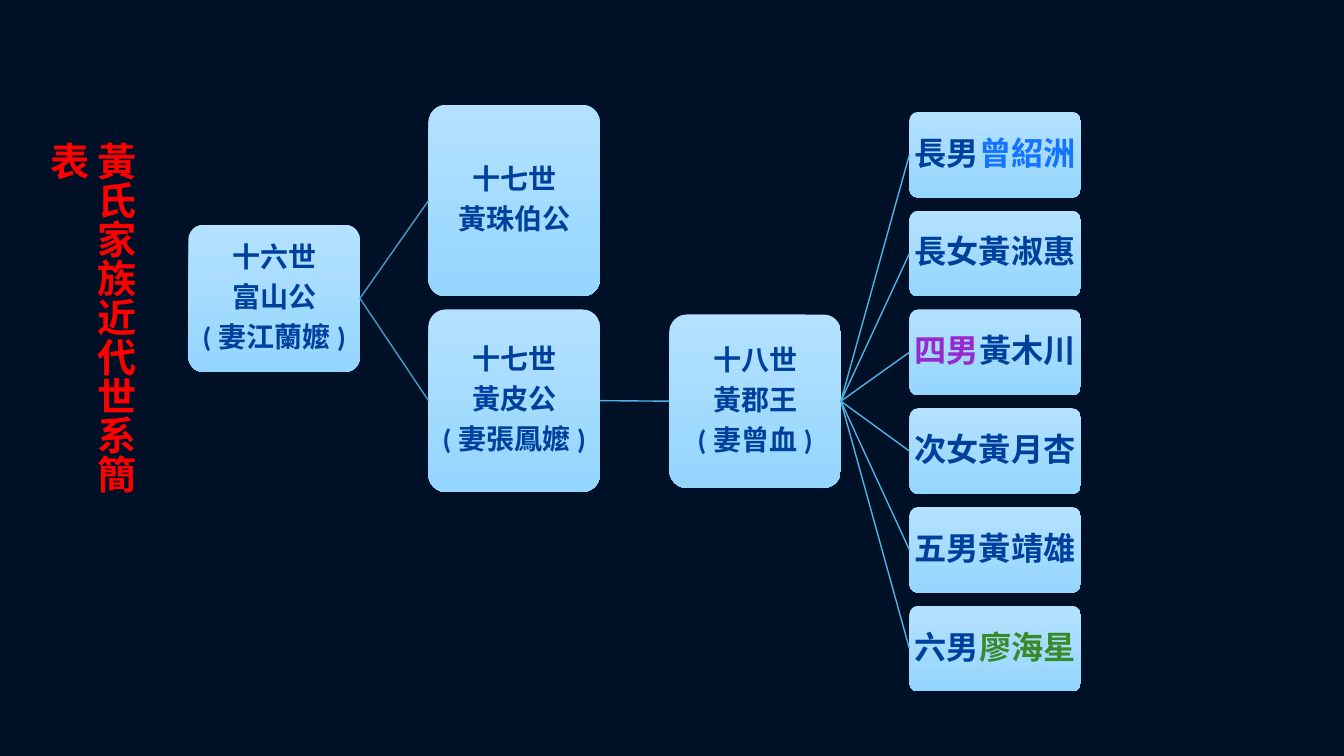
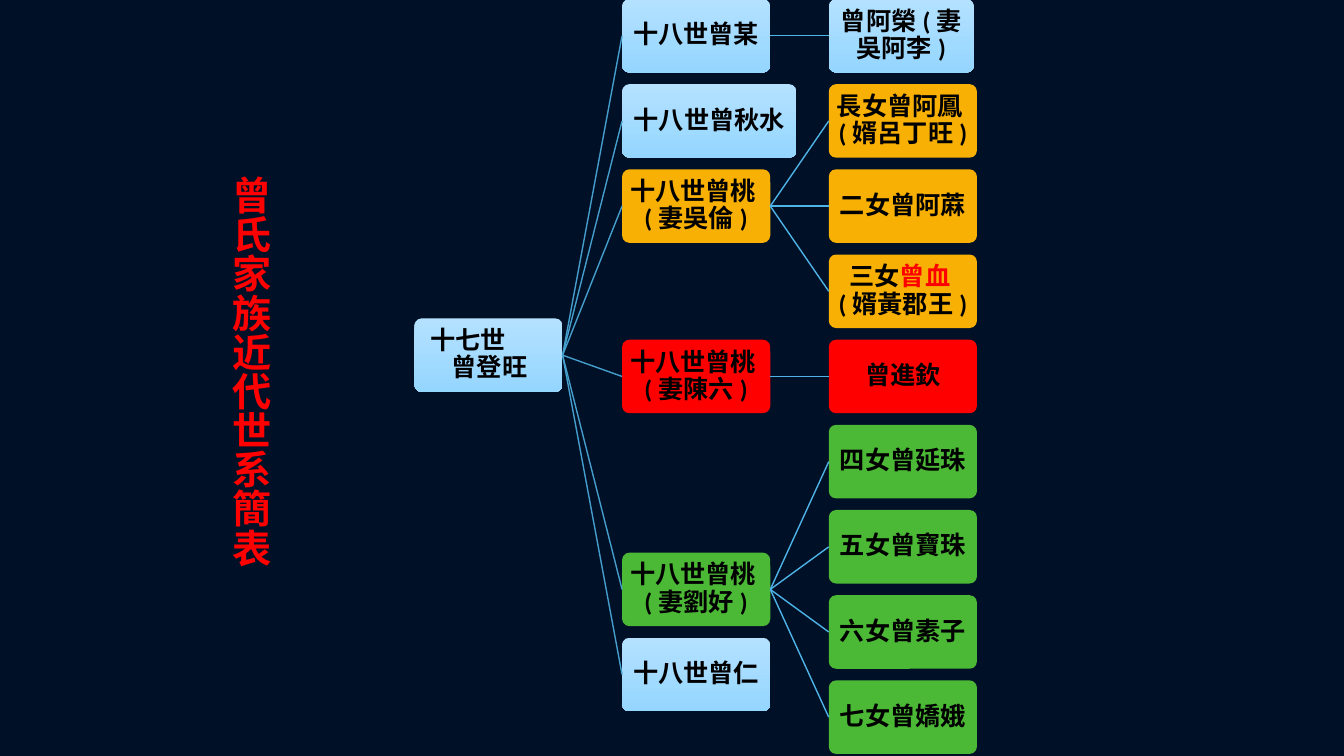
import pptx
import pptx.dml.color
import pptx.enum.shapes
import pptx.enum.text
import pptx.oxml.ns
import pptx.util
from lxml import etree

Inches = pptx.util.Inches
Pt = pptx.util.Pt
ALIGN = pptx.enum.text.PP_ALIGN

COLORS = {
    "night": "001027",
    "sky_top": "B4E1FF",
    "sky_bottom": "95D6FF",
    "navy": "00409D",
    "black": "000000",
    "red": "FF0000",
    "blue": "1474FF",
    "purple": "972ACD",
    "leaf": "388A29",
    "amber": "F8B004",
    "green": "4BB836",
    "first_link": "459ECC",
    "later_link": "4EB3E7",
}


def rgb(name):
    return pptx.dml.color.RGBColor.from_string(COLORS[name])


def write_text(frame, text, *, size, color, align=None, line_spacing=None, gap=0, indents=()):
    lines = [text] if isinstance(text, str) else text
    for index, line in enumerate(lines):
        paragraph = frame.paragraphs[0] if index == 0 else frame.add_paragraph()
        if indents:
            paragraph._p.get_or_add_pPr().set("marL", str(Inches(indents[index])))
        paragraph.alignment = align
        paragraph.line_spacing = line_spacing
        if index:
            paragraph.space_before = Pt(gap)
        pieces = [(line, color)] if isinstance(line, str) else line
        for words, tint in pieces:
            run = paragraph.add_run()
            run.text = words
            run.font.name = "Calibri"
            run.font.size = Pt(size)
            run.font.bold = True
            run.font.color.rgb = rgb(tint)


class FamilyTree:
    def __init__(self):
        self.deck = pptx.Presentation()
        self.deck.slide_width = Inches(13.33)
        self.deck.slide_height = Inches(7.5)
        self.slide = None

    def new_slide(self):
        self.slide = self.deck.slides.add_slide(self.deck.slide_layouts[6])
        fill = self.slide.background.fill
        fill.solid()
        fill.fore_color.rgb = rgb("night")

    def title(self, text, left, top, height):
        box = self.slide.shapes.add_textbox(Inches(left), Inches(top), Inches(0.67), Inches(height))
        frame = box.text_frame
        frame.word_wrap = True
        frame.auto_size = pptx.enum.text.MSO_AUTO_SIZE.SHAPE_TO_FIT_TEXT
        frame._txBody.bodyPr.set("vert", "eaVert")
        write_text(frame, text, size=28, color="red")

    def person(self, text, left, top, width, height, *, fill=None, size=18, color="black",
               inset=0.01, parent=None, link="later_link", align=ALIGN.CENTER, gap=0, indents=()):
        card = self.slide.shapes.add_shape(
            pptx.enum.shapes.MSO_SHAPE.ROUNDED_RECTANGLE,
            Inches(left), Inches(top), Inches(width), Inches(height))
        card.adjustments[0] = 0.1
        card.shadow.inherit = False
        card.line.fill.background()
        if fill:
            card.fill.solid()
            card.fill.fore_color.rgb = rgb(fill)
        else:
            card.fill.gradient()
            card.fill.gradient_angle = 270
            for stop, tint in zip(card.fill.gradient_stops, ("sky_top", "sky_bottom")):
                stop.color.rgb = rgb(tint)
        frame = card.text_frame
        frame.word_wrap = True
        frame.vertical_anchor = pptx.enum.text.MSO_ANCHOR.MIDDLE
        frame.margin_left = frame.margin_right = Inches(inset)
        frame.margin_top = frame.margin_bottom = Inches(inset)
        write_text(frame, text, size=size, color=color, align=align,
                   line_spacing=0.9, gap=gap, indents=indents)
        if parent is not None:
            self.descent(parent, card, link)
        return card

    def descent(self, parent, child, color):
        link = self.slide.shapes.add_connector(pptx.enum.shapes.MSO_CONNECTOR.STRAIGHT, 0, 0, 0, 0)
        link.begin_connect(parent, 3)
        link.end_connect(child, 1)
        link.line.color.rgb = rgb(color)
        link.line.width = Pt(1)
        etree.SubElement(link._element.spPr, pptx.oxml.ns.qn("a:effectLst"))


def build_huang(tree):
    tree.new_slide()
    elder = {"size": 20, "color": "navy", "gap": 7}
    fushan = tree.person(["十六世", "富山公", "(妻江蘭嬤)"], 1.87, 2.23, 1.7, 1.46, **elder)
    tree.person(["十七世", "黃珠伯公"], 4.25, 1.04, 1.7, 1.9,
                parent=fushan, link="first_link", **elder)
    huangpi = tree.person(["十七世", "黃皮公", "(妻張鳳嬤)"], 4.25, 3.07, 1.7, 1.81,
                          parent=fushan, link="first_link", **elder)
    junwang = tree.person(["十八世", "黃郡王", "(妻曾血)"], 6.64, 3.12, 1.7, 1.72,
                          parent=huangpi, **elder)
    children = [
        [("長男", "navy"), ("曾紹洲", "blue")],
        "長女黃淑惠",
        [("四男", "purple"), ("黃木川", "navy")],
        "次女黃月杏",
        "五男黃靖雄",
        [("六男", "navy"), ("廖海星", "leaf")],
    ]
    for row, child in enumerate(children):
        tree.person([child], 9.02, 1.11 + 0.98 * row, 1.7, 0.85,
                    size=23, color="navy", inset=0.02, parent=junwang)
    tree.title("黃氏家族近代世系簡表", 0.76, 1.31, 4.02)


def build_zeng(tree):
    tree.new_slide()
    pitch = 6.76 / 8

    def place(text, left, row, width=1.47, **style):
        return tree.person(text, left, pitch * row - 0.01, width, 0.73, **style)

    dengwang = place(["十七世", "曾登旺"], 4.11, 3.75, align=ALIGN.LEFT, indents=(0.13, 0.34))
    branches = [
        ("十八世曾某", 0, 1.47, None, 1.44, [(0, "曾阿榮(妻 吳阿李)")]),
        ("十八世曾秋水", 1, 1.73, None, 1.47, []),
        ("十八世曾桃(妻吳倫)", 2, 1.47, "amber", 1.47, [
            (1, "長女曾阿鳳(婿呂丁旺)"),
            (2, "二女曾阿蔴"),
            (3, [("三女", "black"), ("曾血", "red"), ("(婿黃郡王)", "black")]),
        ]),
        ("十八世曾桃(妻陳六)", 4, 1.47, "red", 1.47, [(4, "曾進欽")]),
        ("十八世曾桃(妻劉好)", 6.5, 1.47, "green", 1.47, [
            (5, "四女曾延珠"),
            (6, "五女曾寶珠"),
            (7, "六女曾素子"),
            (8, "七女曾嬌娥"),
        ]),
        ("十八世曾仁", 7.5, 1.47, None, 1.47, []),
    ]
    for name, row, width, fill, child_width, children in branches:
        branch = place(name, 6.17, row, width, fill=fill, parent=dengwang, link="first_link")
        for child_row, child in children:
            place([child], 8.22, child_row, child_width, fill=fill, parent=branch)
    tree.title("曾氏家族近代世系簡表", 2.1, 1.65, 4.49)


def main():
    tree = FamilyTree()
    build_huang(tree)
    build_zeng(tree)
    tree.deck.save("out.pptx")


if __name__ == "__main__":
    main()
